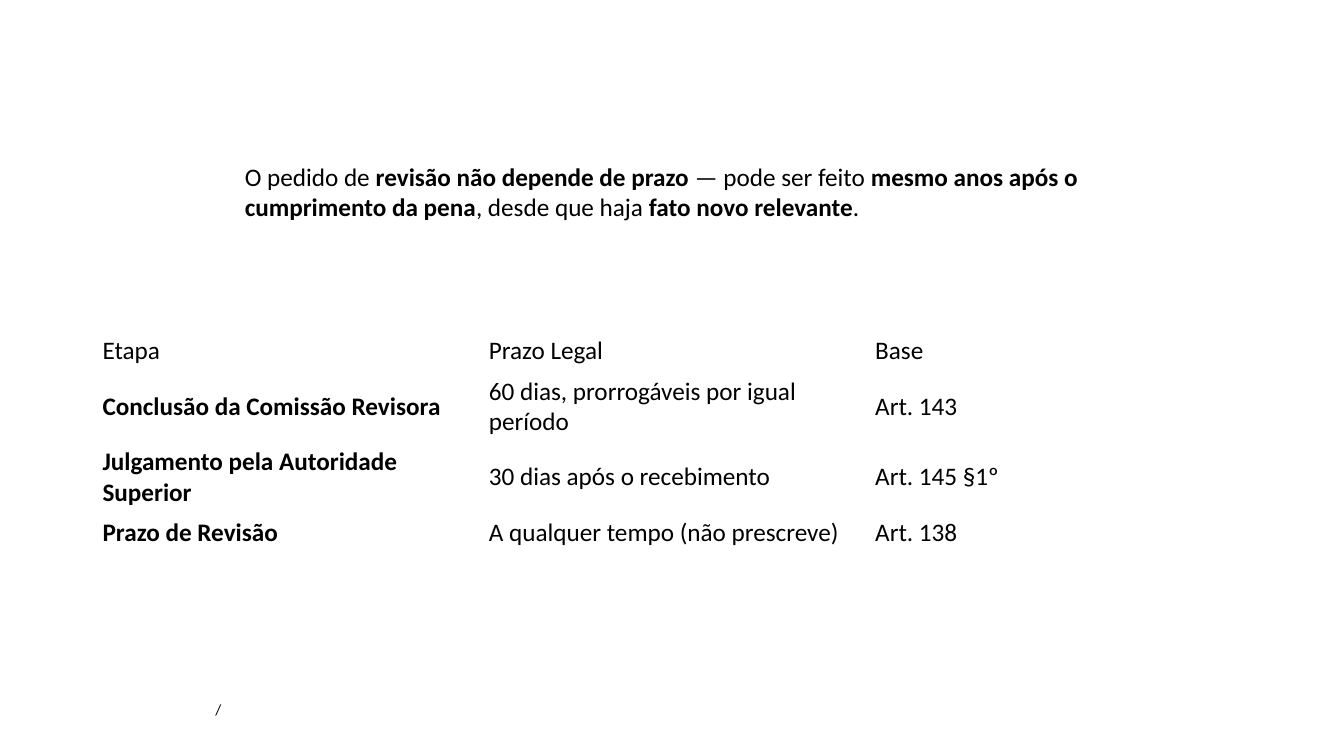
from pptx import Presentation
from pptx.dml.color import RGBColor
from pptx.enum.text import MSO_ANCHOR, MSO_AUTO_SIZE
from pptx.util import Cm, Pt

BLACK = RGBColor(0, 0, 0)
FONT = "Calibri"

STATEMENT = [
    ("O pedido de ", False),
    ("revisão não depende de prazo", True),
    (" — pode ser feito ", False),
    ("mesmo anos após o cumprimento da pena", True),
    (", desde que haja ", False),
    ("fato novo relevante", True),
    (".", False),
]
DEADLINES = [
    ("Etapa", "Prazo Legal", "Base"),
    ("Conclusão da Comissão Revisora", "60 dias, prorrogáveis por igual período", "Art. 143"),
    ("Julgamento pela Autoridade Superior", "30 dias após o recebimento", "Art. 145 §1º"),
    ("Prazo de Revisão", "A qualquer tempo (não prescreve)", "Art. 138"),
]
ONE_LINE, TWO_LINES = Cm(1.02), Cm(1.78)
ROW_HEIGHTS = [ONE_LINE, TWO_LINES, TWO_LINES, ONE_LINE]


def style_paragraph(paragraph, size):
    paragraph.font.name = FONT
    paragraph.font.size = Pt(size)
    paragraph.font.color.rgb = BLACK


def add_text(slide, left, top, width, height, runs, size):
    """Write one paragraph from (text, bold) pairs."""
    frame = slide.shapes.add_textbox(left, top, width, height).text_frame
    frame.word_wrap = True
    frame.auto_size = MSO_AUTO_SIZE.SHAPE_TO_FIT_TEXT
    paragraph = frame.paragraphs[0]
    style_paragraph(paragraph, size)
    for text, bold in runs:
        run = paragraph.add_run()
        run.text = text
        run.font.bold = bold


def add_deadlines(slide, left, top, width):
    columns = len(DEADLINES[0])
    table = slide.shapes.add_table(
        len(DEADLINES), columns, left, top, width, sum(ROW_HEIGHTS)
    ).table
    table.first_row = False
    table.horz_banding = False
    for column in table.columns:
        column.width = width // columns
    for row, height in enumerate(ROW_HEIGHTS):
        table.rows[row].height = height
        for column, text in enumerate(DEADLINES[row]):
            cell = table.cell(row, column)
            cell.fill.background()
            cell.vertical_anchor = MSO_ANCHOR.MIDDLE
            cell.text = text
            paragraph = cell.text_frame.paragraphs[0]
            style_paragraph(paragraph, 18)
            paragraph.font.bold = row > 0 and column == 0


def main():
    deck = Presentation()
    deck.slide_width, deck.slide_height = Cm(33.87), Cm(19.05)
    slide = deck.slides.add_slide(deck.slide_layouts[6])
    add_text(slide, Cm(5.18), Cm(17.53), Cm(23.5), Cm(0.74), [("/", False)], 11)
    add_deadlines(slide, Cm(2.33), Cm(8.33), Cm(29.21))
    add_text(slide, Cm(5.92), Cm(3.94), Cm(21.82), Cm(1.8), STATEMENT, 18)
    deck.save("out.pptx")


if __name__ == "__main__":
    main()
